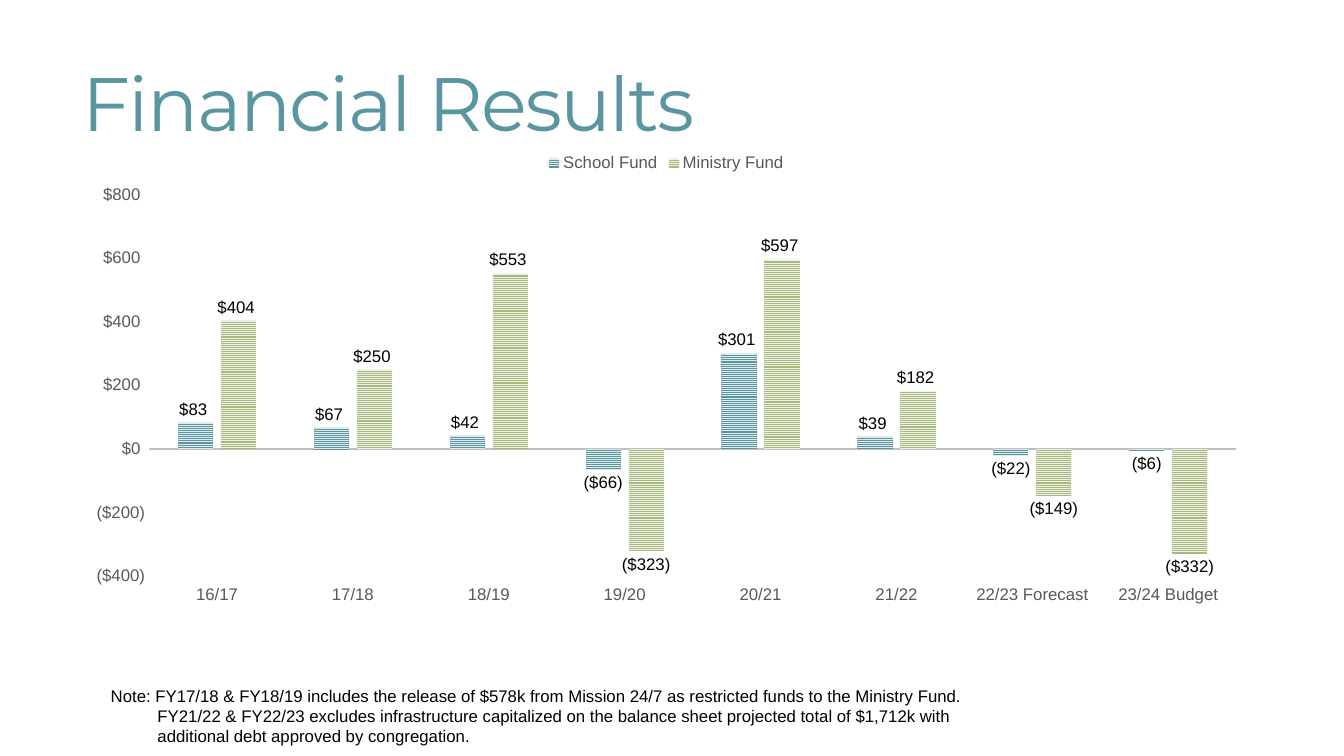
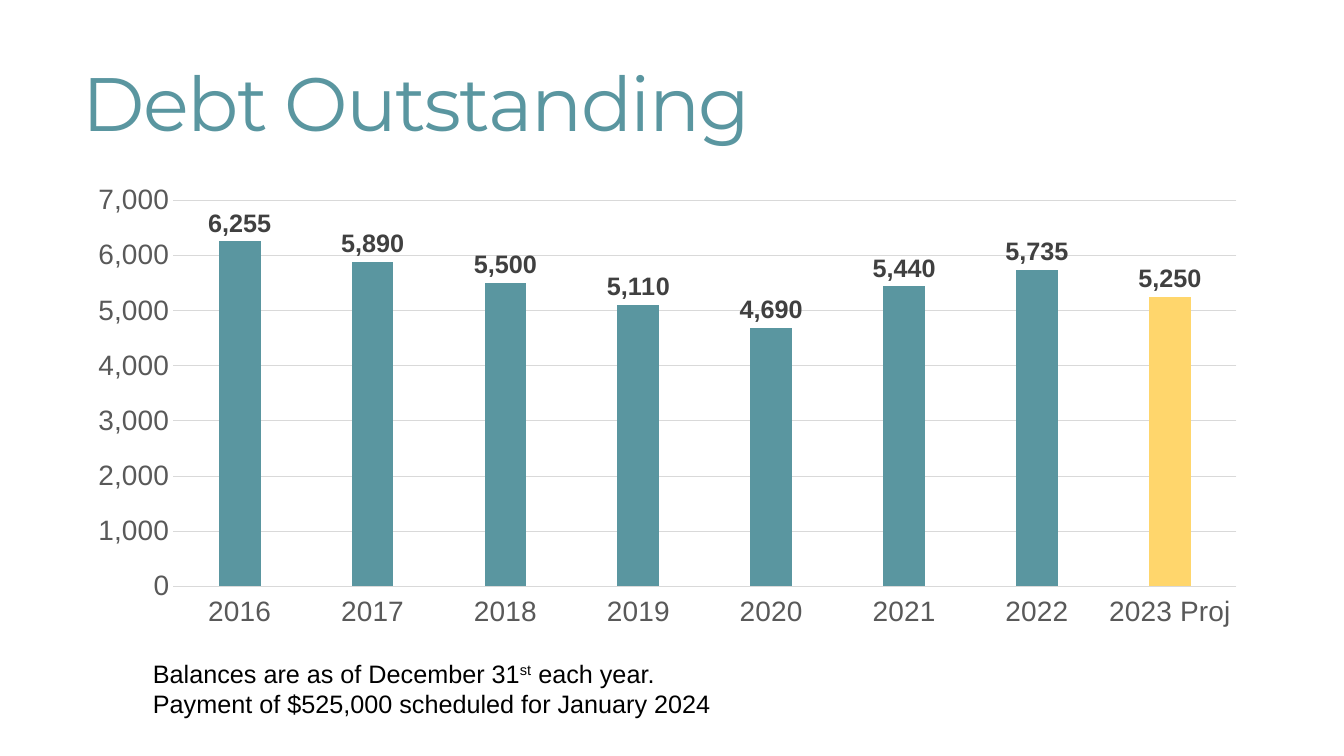
from pptx import Presentation
from pptx.chart.data import CategoryChartData
from pptx.dml.color import RGBColor
from pptx.enum.chart import (XL_CHART_TYPE, XL_LABEL_POSITION, XL_LEGEND_POSITION,
                             XL_TICK_LABEL_POSITION, XL_TICK_MARK)
from pptx.enum.dml import MSO_PATTERN
from pptx.enum.text import MSO_ANCHOR, MSO_AUTO_SIZE, PP_ALIGN
from pptx.util import Pt

TEAL = RGBColor(0x5A, 0x96, 0xA0)
PALE_TEAL = RGBColor(0xDE, 0xEA, 0xEC)
GREEN = RGBColor(0xA8, 0xB9, 0x7F)
PALE_GREEN = RGBColor(0xEE, 0xF1, 0xE5)
YELLOW = RGBColor(0xFF, 0xD6, 0x6C)
BLACK = RGBColor(0, 0, 0)
DARK = RGBColor(0x40, 0x40, 0x40)
GRAY = RGBColor(0x59, 0x59, 0x59)
SILVER = RGBColor(0xBF, 0xBF, 0xBF)
LIGHT = RGBColor(0xD9, 0xD9, 0xD9)

HEAD, BODY = "Montserrat", "Arial"
MONEY = '"$"#,##0_);\\("$"#,##0\\)'
PLAIN = "#,##0"
TITLE_BOX = (52, 39.6, 848, 75)

# Each note line is (left indent, [(text, is superscript), ...]).
FUNDS = {
    "title": "Financial Results",
    "box": (52, 102, 848, 336),
    "cats": ["16/17", "17/18", "18/19", "19/20", "20/21", "21/22",
             "22/23 Forecast", "23/24 Budget"],
    "series": [
        ("School Fund", [83, 67, 42, -66, 301, 39, -22, -6]),
        ("Ministry Fund", [404, 250, 553, -323, 597, 182, -149, -332]),
    ],
    "format": MONEY, "gap": 164, "overlap": -22, "range": (-400, 800, 200),
    "axis size": 12, "axis line": (SILVER, 1.5),
    "label": (12, BLACK, False),
    "note box": (72, 486, 636, 51), "note size": 12,
    "note": [
        (0, [("Note: FY17/18 & FY18/19 includes the release of $578k from "
              "Mission 24/7 as restricted funds to the Ministry Fund.", False)]),
        (33.4, [("FY21/22 & FY22/23 excludes infrastructure capitalized on the "
                 "balance sheet projected total of $1,712k with", False)]),
        (33.4, [("additional debt approved by congregation.", False)]),
    ],
}
DEBT = {
    "title": "Debt Outstanding",
    "box": (53.3, 125.3, 846.7, 329.8),
    "cats": ["2016", "2017", "2018", "2019", "2020", "2021", "2022", "2023 Proj"],
    "series": [("Series 1", [6255, 5890, 5500, 5110, 4690, 5440, 5735, 5250])],
    "format": PLAIN, "gap": 219, "overlap": -27, "range": (0, 7000, 1000),
    "axis size": 20, "axis line": (LIGHT, 0.75),
    "label": (18, DARK, True),
    "note box": (102.2, 466.6, 576, 51), "note size": 18,
    "note": [
        (0, [("Balances are as of December 31", False), ("st", True),
             (" each year.", False)]),
        (0, [("Payment of $525,000 scheduled for January 2024", False)]),
    ],
}


def points(box):
    return [Pt(n) for n in box]


def style(font, size, color, name=BODY, bold=False):
    font.name, font.size, font.bold = name, Pt(size), bold
    font.color.rgb = color


def stroke(line, color, width):
    line.color.rgb = color
    line.width = Pt(width)


def add_title(slide, text):
    title = slide.shapes.title
    title.left, title.top, title.width, title.height = points(TITLE_BOX)
    frame = title.text_frame
    frame.text = text
    frame.vertical_anchor = MSO_ANCHOR.MIDDLE
    para = frame.paragraphs[0]
    para.alignment = PP_ALIGN.LEFT
    para.line_spacing = 0.85
    style(para.font, 54, TEAL, HEAD)
    para.runs[0]._r.get_or_add_rPr().set("spc", "-120")


def add_chart(slide, spec):
    data = CategoryChartData(number_format=spec["format"])
    data.categories = spec["cats"]
    for name, vals in spec["series"]:
        data.add_series(name, vals)
    chart = slide.shapes.add_chart(
        XL_CHART_TYPE.COLUMN_CLUSTERED, *points(spec["box"]), data).chart
    chart.has_title = chart.has_legend = False
    style(chart.font, 10, BLACK)

    cat, val = chart.category_axis, chart.value_axis
    for axis in (cat, val):
        axis.major_tick_mark = axis.minor_tick_mark = XL_TICK_MARK.NONE
        axis.has_major_gridlines = False
        style(axis.tick_labels.font, spec["axis size"], GRAY)
    cat.tick_label_position = XL_TICK_LABEL_POSITION.LOW
    stroke(cat.format.line, *spec["axis line"])
    val.format.line.fill.background()
    val.minimum_scale, val.maximum_scale, val.major_unit = spec["range"]
    val.tick_labels.number_format = spec["format"]
    val.tick_labels.number_format_is_linked = False

    plot = chart.plots[0]
    plot.vary_by_categories = False
    plot.gap_width, plot.overlap = spec["gap"], spec["overlap"]
    for series in plot.series:
        series.invert_if_negative = False
        labels = series.data_labels
        labels.show_value = True
        labels.position = XL_LABEL_POSITION.OUTSIDE_END
        labels.number_format = spec["format"]
        labels.number_format_is_linked = False
        size, color, bold = spec["label"]
        style(labels.font, size, color, bold=bold)
    return chart


def add_note(slide, spec):
    box = slide.shapes.add_textbox(*points(spec["note box"]))
    frame = box.text_frame
    frame.word_wrap = True
    frame.auto_size = MSO_AUTO_SIZE.SHAPE_TO_FIT_TEXT
    for i, (indent, parts) in enumerate(spec["note"]):
        para = frame.add_paragraph() if i else frame.paragraphs[0]
        if indent:
            para._p.get_or_add_pPr().set("marL", str(Pt(indent)))
        style(para.font, spec["note size"], BLACK)
        for text, raised in parts:
            run = para.add_run()
            run.text = text
            if raised:
                run._r.get_or_add_rPr().set("baseline", "30000")


def add_slide(deck, spec):
    """Add a slide with title, chart and note; return its chart."""
    slide = deck.slides.add_slide(deck.slide_layouts.get_by_name("Title Only"))
    add_title(slide, spec["title"])
    chart = add_chart(slide, spec)
    add_note(slide, spec)
    return chart


def main():
    deck = Presentation()
    deck.slide_width, deck.slide_height = Pt(960), Pt(540)

    funds = add_slide(deck, FUNDS)
    funds.has_legend = True
    funds.legend.position = XL_LEGEND_POSITION.TOP
    funds.legend.include_in_layout = False
    style(funds.legend.font, 12, GRAY)
    tints = [(TEAL, PALE_TEAL), (GREEN, PALE_GREEN)]
    for series, (fore, back) in zip(funds.plots[0].series, tints):
        fill = series.format.fill
        fill.patterned()
        fill.pattern = MSO_PATTERN.NARROW_HORIZONTAL
        fill.fore_color.rgb, fill.back_color.rgb = fore, back

    debt = add_slide(deck, DEBT)
    debt.value_axis.has_major_gridlines = True
    stroke(debt.value_axis.major_gridlines.format.line, LIGHT, 0.75)
    bars = debt.plots[0].series[0]
    last = bars.points[len(DEBT["cats"]) - 1]
    for part, color in ((bars, TEAL), (last, YELLOW)):
        part.format.fill.solid()
        part.format.fill.fore_color.rgb = color

    deck.save("out.pptx")


if __name__ == "__main__":
    main()
